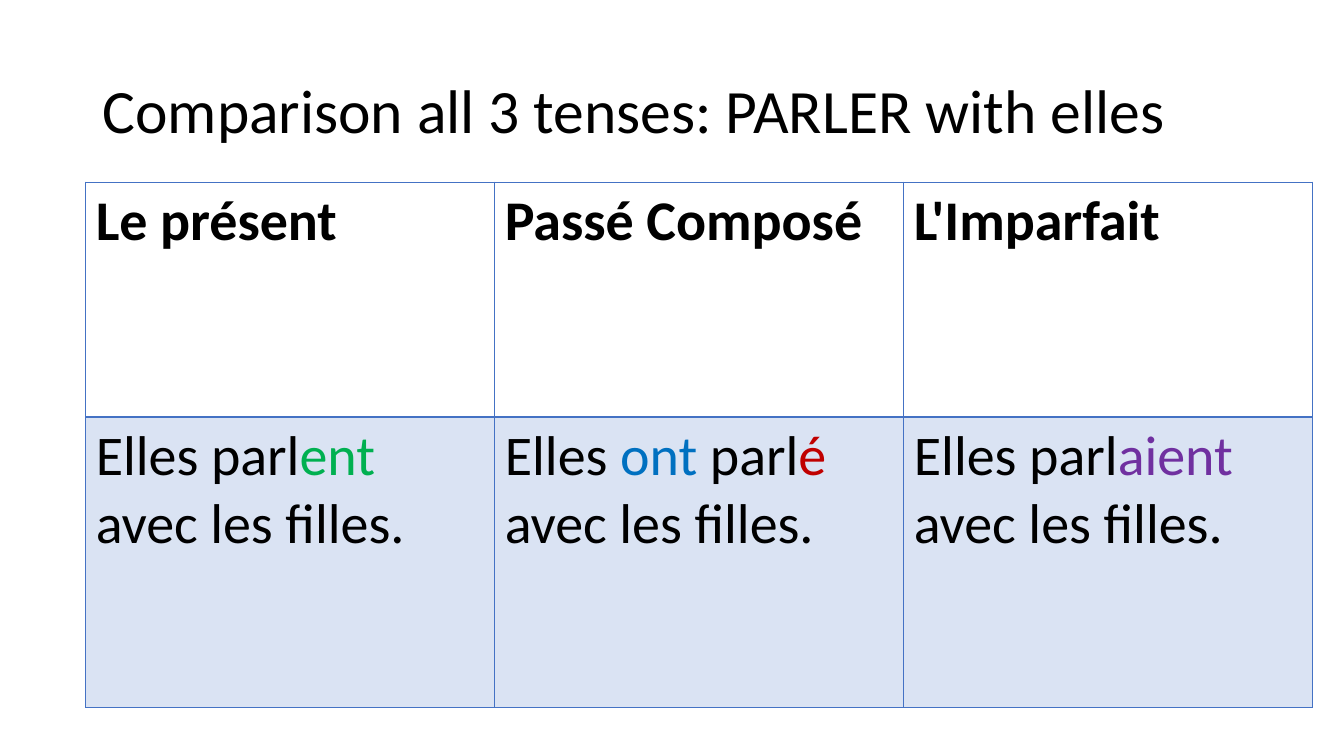
from dataclasses import dataclass

from lxml.etree import SubElement
from pptx import Presentation
from pptx.dml.color import RGBColor
from pptx.enum.text import MSO_ANCHOR
from pptx.oxml.ns import qn
from pptx.util import Pt


@dataclass(frozen=True)
class Theme:
    font: str = "Calibri"
    title_size: int = 44
    table_size: int = 40
    ink: str = "000000"
    border: str = "4472C4"
    band: str = "DAE3F3"
    present: str = "00B050"
    auxiliary: str = "0070C0"
    participle: str = "C00000"
    imperfect: str = "7030A0"


class SlideBuilder:
    def __init__(self, slide, theme):
        self.slide = slide
        self.theme = theme

    def add_spans(self, paragraph, spans, size, bold=False):
        for text, color in spans:
            span = paragraph.add_run()
            span.text = text
            span.font.name = self.theme.font
            span.font.size = Pt(size)
            span.font.bold = bold
            span.font.color.rgb = RGBColor.from_string(color)

    def title(self, text, left, top, width, height):
        box = self.slide.shapes.add_textbox(Pt(left), Pt(top), Pt(width), Pt(height))
        frame = box.text_frame
        frame.word_wrap = True
        frame.vertical_anchor = MSO_ANCHOR.MIDDLE
        paragraph = frame.paragraphs[0]
        paragraph.line_spacing = 0.9
        self.add_spans(paragraph, [(text, self.theme.ink)], self.theme.title_size)

    def borders(self, cell, widths):
        properties = cell._tc.get_or_add_tcPr()
        for side, width in widths.items():
            line = SubElement(properties, qn(f"a:ln{side}"), w=str(Pt(width)))
            fill = SubElement(line, qn("a:solidFill"))
            SubElement(fill, qn("a:srgbClr"), val=self.theme.border)

    def table(self, rows, left, top, column_width, row_heights):
        count = len(rows[0])
        table = self.slide.shapes.add_table(
            len(rows), count, Pt(left), Pt(top),
            Pt(column_width * count), Pt(sum(row_heights)),
        ).table
        table.horz_banding = False
        for column in table.columns:
            column.width = Pt(column_width)
        for index, (row, height) in enumerate(zip(rows, row_heights)):
            header = index == 0
            table.rows[index].height = Pt(height)
            for cell, spans in zip(table.rows[index].cells, row):
                self.add_spans(cell.text_frame.paragraphs[0], spans,
                               self.theme.table_size, header)
                self.borders(cell, {"L": 1, "R": 1, "T": 1 if header else 2,
                                    "B": 2 if header else 1})
                if header:
                    cell.fill.background()
                else:
                    cell.fill.solid()
                    cell.fill.fore_color.rgb = RGBColor.from_string(self.theme.band)


def main():
    deck = Presentation()
    deck.slide_width, deck.slide_height = Pt(960), Pt(540)
    theme = Theme()
    page = SlideBuilder(deck.slides.add_slide(deck.slide_layouts[6]), theme)
    page.title("Comparison all 3 tenses: PARLER with elles", 66.24, 28.8, 828, 104.4)

    headings = ["Le présent", "Passé Composé", "L'Imparfait"]
    ending = (" avec les filles.", theme.ink)
    sentences = [
        [("Elles parl", theme.ink), ("ent", theme.present), ending],
        [("Elles ", theme.ink), ("ont ", theme.auxiliary),
         ("parl", theme.ink), ("é", theme.participle), ending],
        [("Elles parl", theme.ink), ("aient", theme.imperfect), ending],
    ]
    header = [[(heading, theme.ink)] for heading in headings]
    page.table([header, sentences], 61.2, 130.2, 292.2, [167.8, 207.4])
    deck.save("out.pptx")


if __name__ == "__main__":
    main()
